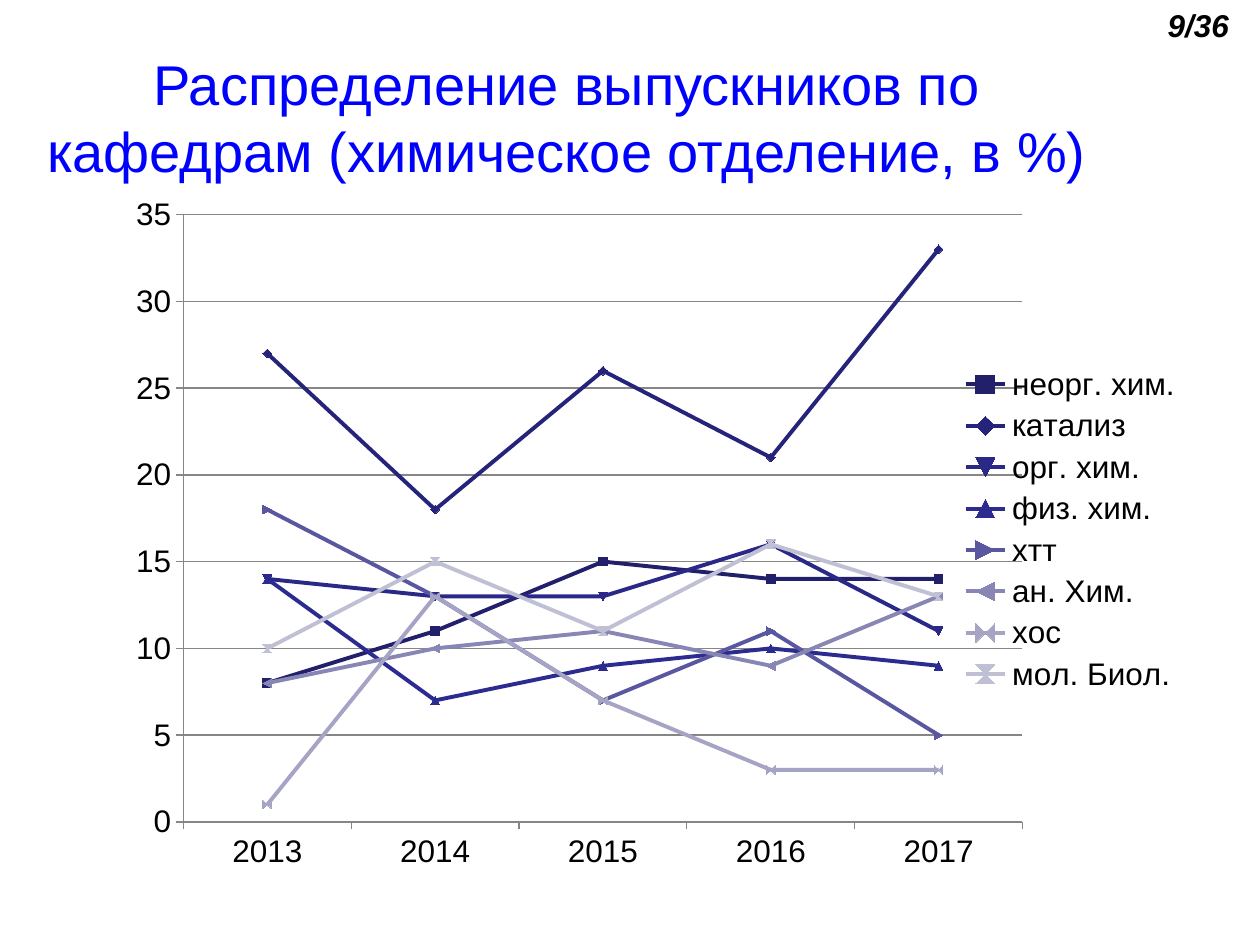
from lxml import etree
from pptx import Presentation
from pptx.chart.data import CategoryChartData
from pptx.dml.color import RGBColor
from pptx.enum import chart as charts, text
from pptx.oxml import ns
from pptx.util import Pt

FONT = "Arial"
TITLE = "Распределение выпускников по кафедрам (химическое отделение, в %)"
PAGE = "9/36"
YEARS = ["2013", "2014", "2015", "2016", "2017"]
DEPARTMENTS = [
    ("неорг. хим.", (8, 11, 15, 14, 14), "22206A"),
    ("катализ", (27, 18, 26, 21, 33), "25247A"),
    ("орг. хим.", (14, 13, 13, 16, 11), "2A2988"),
    ("физ. хим.", (14, 7, 9, 10, 9), "2C2C90"),
    ("хтт", (18, 13, 7, 11, 5), "5857A0"),
    ("ан. Хим.", (8, 10, 11, 9, 13), "8886B4"),
    ("хос", (1, 13, 7, 3, 3), "A6A4C4"),
    ("мол. Биол.", (10, 15, 11, 16, 13), "C0C0D4"),
]
PLOT_AREA = {"x": 0.047, "y": 0.029, "w": 0.79, "h": 0.909}


def color(value):
    return RGBColor.from_string(value)


def style_font(font, size, value):
    font.name = FONT
    font.size = Pt(size)
    font.color.rgb = color(value)


def add_text(slide, box, content, size, value, align, wrap):
    shape = slide.shapes.add_textbox(*map(Pt, box))
    frame = shape.text_frame
    frame.word_wrap = wrap
    frame.vertical_anchor = text.MSO_ANCHOR.MIDDLE
    paragraph = frame.paragraphs[0]
    paragraph.alignment = align
    run = paragraph.add_run()
    run.text = content
    style_font(run.font, size, value)
    return run


def place_plot_area(chart):
    """Fix the inner plot rectangle as fractions of the chart."""
    plot_area = chart._chartSpace.chart.plotArea
    for old in plot_area.findall(ns.qn("c:layout")):
        plot_area.remove(old)
    layout = etree.Element(ns.qn("c:layout"))
    plot_area.insert(0, layout)
    manual = etree.SubElement(layout, ns.qn("c:manualLayout"))
    settings = {"layoutTarget": "inner", "xMode": "edge", "yMode": "edge", **PLOT_AREA}
    for name, value in settings.items():
        etree.SubElement(manual, ns.qn(f"c:{name}"), val=str(value))


def add_line_chart(slide):
    data = CategoryChartData()
    data.categories = YEARS
    for name, values, _ in DEPARTMENTS:
        data.add_series(name, values)
    frame = slide.shapes.add_chart(
        charts.XL_CHART_TYPE.LINE_MARKERS, Pt(76.3), Pt(111.6), Pt(607), Pt(385.2), data)
    chart = frame.chart
    style_font(chart.font, 18, "000000")
    chart.has_title = False
    chart.has_legend = True
    chart.legend.position = charts.XL_LEGEND_POSITION.RIGHT
    chart.legend.include_in_layout = False
    chart.plots[0].vary_by_categories = False
    place_plot_area(chart)

    value_axis = chart.value_axis
    value_axis.minimum_scale, value_axis.maximum_scale = 0, 35
    value_axis.major_unit = 5
    value_axis.has_major_gridlines = True
    for axis in (value_axis, chart.category_axis):
        axis.major_tick_mark = charts.XL_TICK_MARK.OUTSIDE
    for part in (value_axis, chart.category_axis, value_axis.major_gridlines):
        part.format.line.color.rgb = color("868686")
        part.format.line.width = Pt(0.75)

    for series, (_, _, value) in zip(chart.plots[0].series, DEPARTMENTS):
        series.smooth = False
        series.format.line.color.rgb = color(value)
        series.format.line.width = Pt(2.25)
        marker = series.marker.format
        marker.fill.solid()
        marker.fill.fore_color.rgb = color(value)
        marker.line.color.rgb = color(value)


presentation = Presentation()
presentation.slide_width, presentation.slide_height = Pt(720), Pt(540)
slide = presentation.slides.add_slide(presentation.slide_layouts[6])
add_text(slide, (0, 21.6, 648, 90), TITLE, 32, "0000FF", text.PP_ALIGN.CENTER, True)
add_line_chart(slide)
page = add_text(slide, (660.2, 0, 49.7, 28.8), PAGE, 18, "000000", text.PP_ALIGN.LEFT, False)
page.font.bold = page.font.italic = True
presentation.save("out.pptx")
